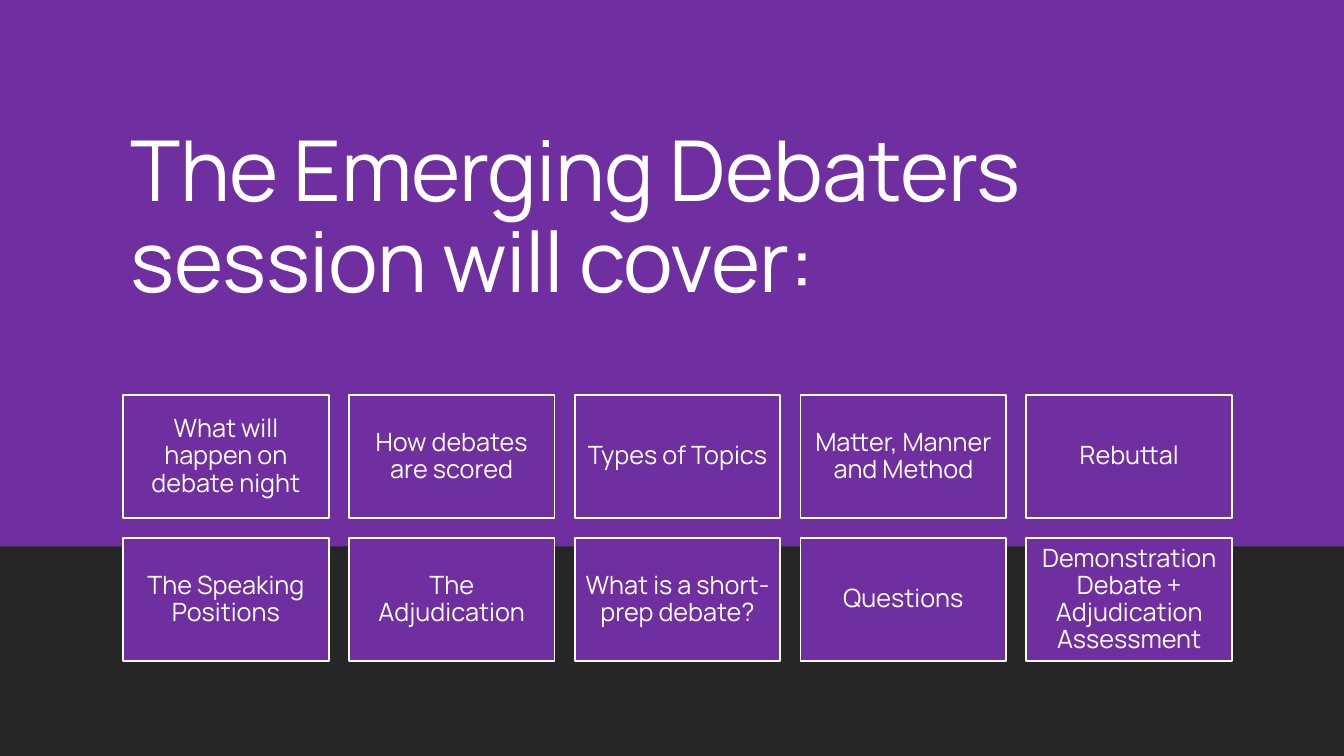
from dataclasses import dataclass

from pptx import Presentation
from pptx import util as u
from pptx.dml.color import RGBColor
from pptx.enum import shapes, text

TITLE = "The Emerging Debaters session will cover:"
TOPICS = [
    ["What will happen on debate night", "How debates are scored", "Types of Topics",
     "Matter, Manner and Method", "Rebuttal"],
    ["The Speaking Positions", "The Adjudication", "What is a short-prep debate?",
     "Questions", "Demonstration Debate + Adjudication Assessment"],
]


@dataclass(frozen=True)
class Theme:
    purple: str = "702FA0"
    dark: str = "262626"
    white: str = "FFFFFF"
    font: str = "Manrope"
    title_size: int = 60
    topic_size: int = 18
    outline: float = 1.25
    line_spacing: float = 0.9


THEME = Theme()
WIDTH, HEIGHT = 13.33, 7.5
BAND_TOP = 5.42
TITLE_BOX = (1.2, 0.83, 11, 2.3)
GRID_LEFT, GRID_TOP = 1.22, 3.92
CARD_WIDTH, CARD_HEIGHT, GAP = 2.04, 1.22, 0.2
CARD_INSET = 0.07


def add_rect(slide, left, top, width, height, color, outline=None):
    rect = slide.shapes.add_shape(shapes.MSO_SHAPE.RECTANGLE,
                                  *map(u.Inches, (left, top, width, height)))
    rect.shadow.inherit = False
    rect.fill.solid()
    rect.fill.fore_color.rgb = RGBColor.from_string(color)
    if outline:
        rect.line.color.rgb = RGBColor.from_string(outline)
        rect.line.width = u.Pt(THEME.outline)
    else:
        rect.line.fill.background()
    return rect


def write(shape, words, *, size, align, anchor, inset=None, tracking=None):
    """Set the words of a shape; tracking is in points, inset in inches."""
    frame = shape.text_frame
    frame.word_wrap = True
    frame.vertical_anchor = anchor
    if inset is not None:
        frame.margin_left = frame.margin_right = u.Inches(inset)
        frame.margin_top = frame.margin_bottom = u.Inches(inset)
    paragraph = frame.paragraphs[0]
    paragraph.alignment = align
    paragraph.line_spacing = THEME.line_spacing
    run = paragraph.add_run()
    run.text = words
    run.font.name = THEME.font
    run.font.size = u.Pt(size)
    run.font.color.rgb = RGBColor.from_string(THEME.white)
    if tracking is not None:
        run._r.get_or_add_rPr().set("spc", str(round(tracking * 100)))


def main():
    deck = Presentation()
    deck.slide_width, deck.slide_height = u.Inches(WIDTH), u.Inches(HEIGHT)
    slide = deck.slides.add_slide(deck.slide_layouts[6])

    add_rect(slide, 0, 0, WIDTH, HEIGHT, THEME.purple)
    heading = slide.shapes.add_textbox(*map(u.Inches, TITLE_BOX))
    write(heading, TITLE, size=THEME.title_size, align=text.PP_ALIGN.LEFT,
          anchor=text.MSO_ANCHOR.BOTTOM, tracking=-0.5)
    add_rect(slide, 0, BAND_TOP, WIDTH, HEIGHT - BAND_TOP, THEME.dark)

    for row, topics in enumerate(TOPICS):
        for column, topic in enumerate(topics):
            card = add_rect(slide, GRID_LEFT + column * (CARD_WIDTH + GAP),
                            GRID_TOP + row * (CARD_HEIGHT + GAP),
                            CARD_WIDTH, CARD_HEIGHT, THEME.purple, outline=THEME.white)
            write(card, topic, size=THEME.topic_size, align=text.PP_ALIGN.CENTER,
                  anchor=text.MSO_ANCHOR.MIDDLE, inset=CARD_INSET)

    deck.save("out.pptx")


if __name__ == "__main__":
    main()
